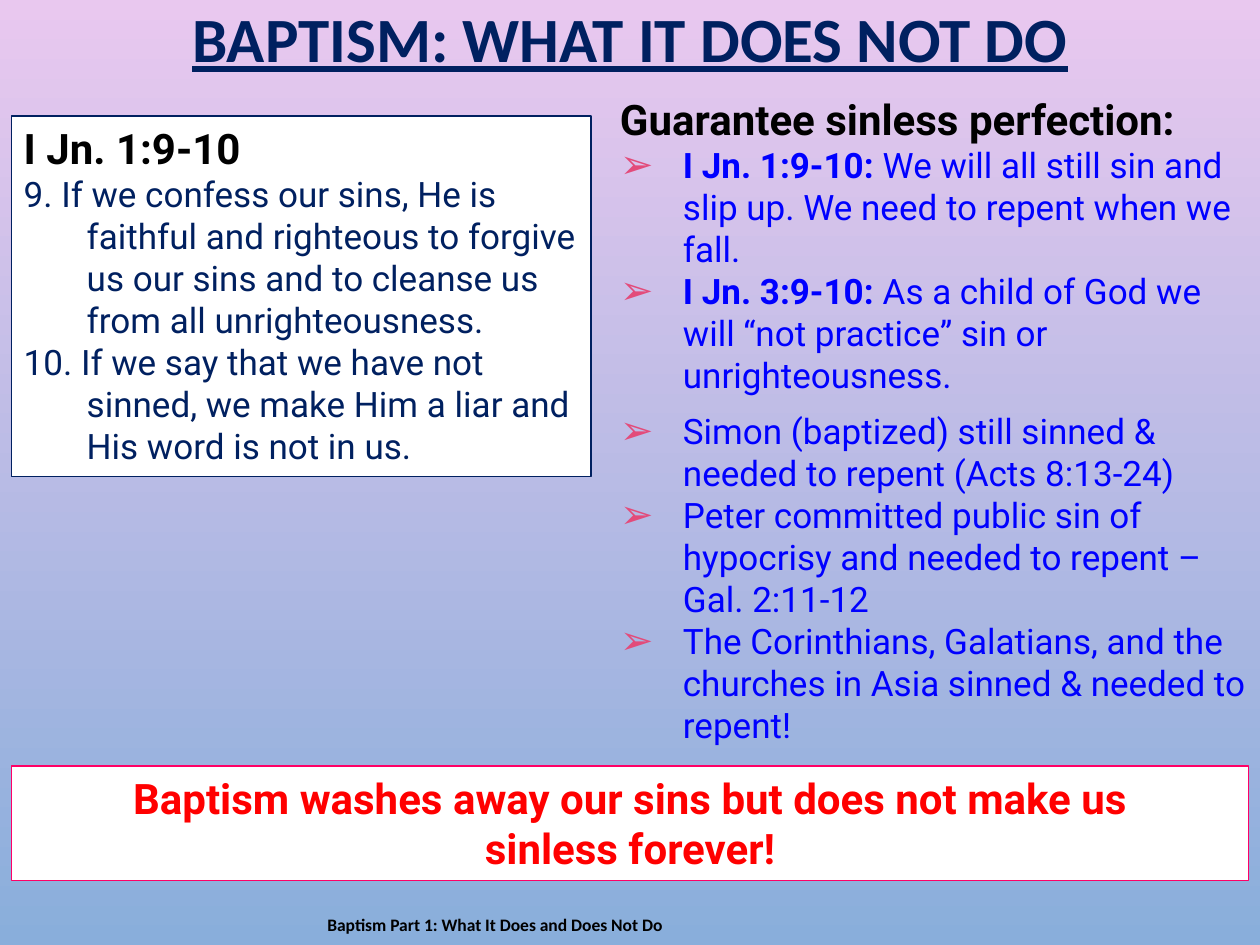
from dataclasses import dataclass

from lxml import etree
from pptx import Presentation
from pptx.dml.color import RGBColor
from pptx.enum.shapes import MSO_SHAPE
from pptx.enum.text import MSO_ANCHOR, MSO_AUTO_SIZE, PP_ALIGN
from pptx.oxml.ns import qn
from pptx.util import Inches, Pt

RECTANGLE = MSO_SHAPE.RECTANGLE
LEFT, CENTER = PP_ALIGN.LEFT, PP_ALIGN.CENTER
TOP, MIDDLE = MSO_ANCHOR.TOP, MSO_ANCHOR.MIDDLE
NO_AUTOFIT = MSO_AUTO_SIZE.NONE

PINK_SKY = RGBColor(0xE9, 0xC8, 0xEF)
BLUE_SKY = RGBColor(0x89, 0xAE, 0xDB)
NAVY = RGBColor(0x00, 0x20, 0x60)
BLUE = RGBColor(0x00, 0x00, 0xFF)
RED = RGBColor(0xFF, 0x00, 0x00)
MAGENTA = RGBColor(0xFF, 0x00, 0x66)
ROSE = RGBColor(0xE3, 0x4B, 0x7A)
BLACK = RGBColor(0x00, 0x00, 0x00)
WHITE = RGBColor(0xFF, 0xFF, 0xFF)


@dataclass
class Line:
    """One paragraph, with an optional bold reference leading it."""
    text: str
    color: RGBColor
    size: int = 20
    bold: bool = False
    reference: str = ""
    bullet: bool = False
    align: PP_ALIGN = LEFT
    hanging: float = 0.5
    font: str = "Roboto"
    underline: bool = False


@dataclass
class Box:
    left: float
    top: float
    width: float
    height: float
    lines: list[Line]
    border: RGBColor | None = None
    anchor: MSO_ANCHOR = TOP

    def bounds(self) -> list[int]:
        return [Inches(n) for n in (self.left, self.top, self.width, self.height)]


def heading(text: str, color: RGBColor = BLACK, align: PP_ALIGN = LEFT) -> Line:
    return Line(text, color, size=24, bold=True, align=align)


def point(text: str, reference: str = "") -> Line:
    return Line(text, BLUE, reference=reference, bullet=True)


TITLE = Box(0, 0, 10, 0.67, [
    Line("BAPTISM: WHAT IT DOES NOT DO", NAVY, 36, True, align=CENTER,
         hanging=0, font="Calibri", underline=True)], anchor=MIDDLE)
FOOTER = Box(2.5, 7.17, 4.33, 0.33, [
    Line("Baptism Part 1: What It Does and Does Not Do", BLACK, 10, True,
         hanging=0, font="Calibri")], anchor=MIDDLE)
LISTS = [
    Box(4.82, 0.69, 5.18, 2.52, [
        heading("Guarantee sinless perfection:"),
        point("We will all still sin and slip up. We need to repent when we fall.",
              "I Jn. 1:9-10: "),
        point("As a child of God we will “not practice” sin or unrighteousness.",
              "I Jn. 3:9-10: ")]),
    Box(4.82, 3.2, 5.18, 2.79, [
        point("Simon (baptized) still sinned & needed to repent (Acts 8:13-24)"),
        point("Peter committed public sin of hypocrisy and needed to repent – "
              "Gal. 2:11-12"),
        point("The Corinthians, Galatians, and the churches in Asia sinned & "
              "needed to repent!")]),
]
PANELS = [
    Box(0.09, 0.92, 4.6, 2.86, [
        heading("I Jn. 1:9-10"),
        Line("9. If we confess our sins, He is faithful and righteous to forgive "
             "us our sins and to cleanse us from all unrighteousness.", NAVY),
        Line("10. If we say that we have not sinned, we make Him a liar and His "
             "word is not in us.", NAVY)], border=NAVY),
    Box(0.09, 6.08, 9.82, 0.91, [
        heading("Baptism washes away our sins but does not make us", RED, CENTER),
        heading("sinless forever!", RED, CENTER)], border=MAGENTA),
]


def set_indent_and_bullet(paragraph, line: Line) -> None:
    properties = paragraph._p.get_or_add_pPr()
    properties.set("marL", str(Inches(line.hanging)))
    properties.set("indent", str(-Inches(line.hanging)))
    if not line.bullet:
        etree.SubElement(properties, qn("a:buNone"))
        return
    color = etree.SubElement(properties, qn("a:buClr"))
    etree.SubElement(color, qn("a:srgbClr"), val=str(ROSE))
    etree.SubElement(properties, qn("a:buSzPct"), val="115000")
    etree.SubElement(properties, qn("a:buChar"), char="➢")


def write_lines(shape, box: Box) -> None:
    frame = shape.text_frame
    frame.word_wrap = True
    frame.auto_size = NO_AUTOFIT
    frame.vertical_anchor = box.anchor
    for index, line in enumerate(box.lines):
        paragraph = frame.paragraphs[0] if index == 0 else frame.add_paragraph()
        set_indent_and_bullet(paragraph, line)
        paragraph.alignment = line.align
        paragraph.space_before = Pt(0)
        font = paragraph.font
        font.name, font.size = line.font, Pt(line.size)
        font.color.rgb = line.color
        font.bold, font.underline = line.bold, line.underline
        if line.reference:
            reference = paragraph.add_run()
            reference.text = line.reference
            reference.font.bold = True
        paragraph.add_run().text = line.text


def fill_placeholder(placeholder, box: Box) -> None:
    placeholder.left, placeholder.top, placeholder.width, placeholder.height = box.bounds()
    write_lines(placeholder, box)


def add_panel(slide, box: Box) -> None:
    panel = slide.shapes.add_shape(RECTANGLE, *box.bounds())
    panel.shadow.inherit = False
    panel.fill.solid()
    panel.fill.fore_color.rgb = WHITE
    panel.line.color.rgb = box.border
    panel.line.width = Pt(0.75)
    write_lines(panel, box)


def paint_background(slide) -> None:
    fill = slide.background.fill
    fill.gradient()
    fill.gradient_angle = 270
    for stop, color in zip(fill.gradient_stops, (PINK_SKY, BLUE_SKY)):
        stop.color.rgb = color


def main() -> None:
    presentation = Presentation()
    presentation.slide_width, presentation.slide_height = Inches(10), Inches(7.5)
    two_content = presentation.slide_layouts[3]
    slide = presentation.slides.add_slide(two_content)
    paint_background(slide)

    fill_placeholder(slide.shapes.title, TITLE)
    slide.shapes.title.text_frame.paragraphs[0].line_spacing = 0.9
    for index, box in enumerate(LISTS, start=1):
        fill_placeholder(slide.placeholders[index], box)
    write_lines(slide.shapes.add_textbox(*FOOTER.bounds()), FOOTER)
    for box in PANELS:
        add_panel(slide, box)
    presentation.save("out.pptx")


if __name__ == "__main__":
    main()
